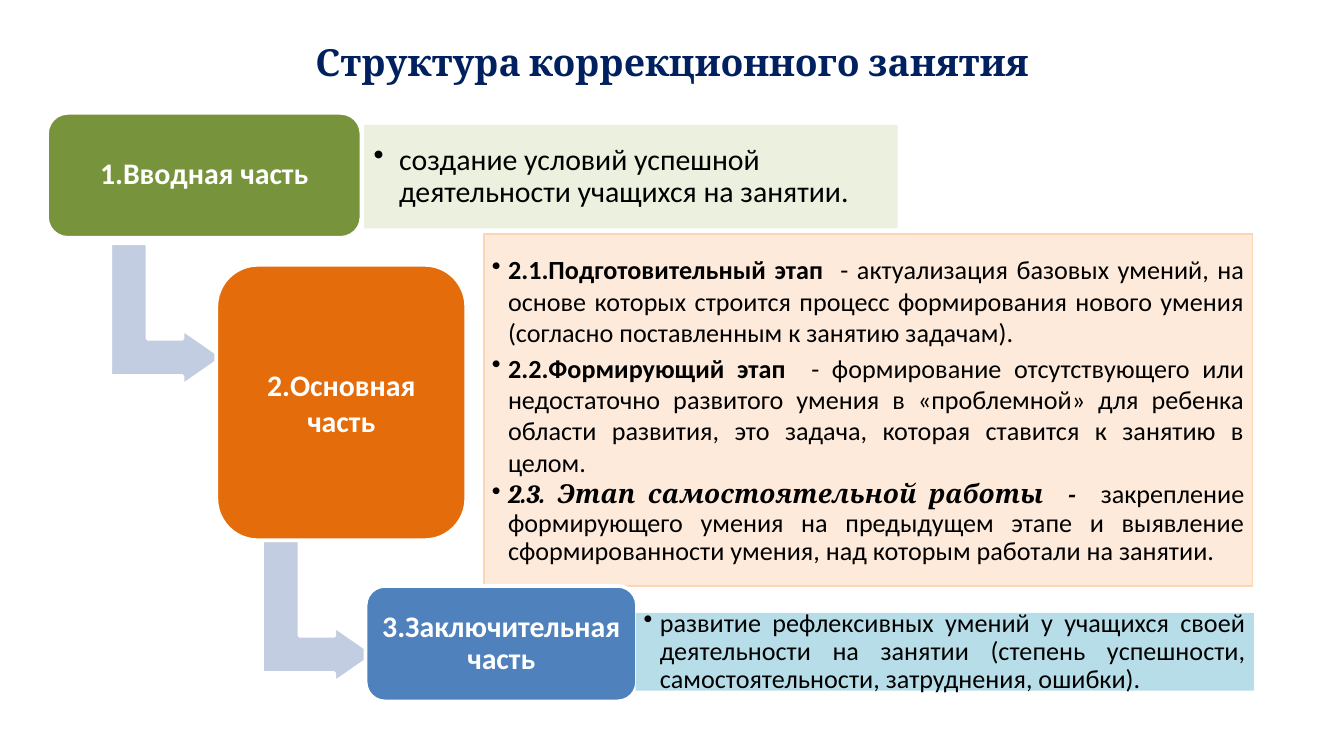
from lxml import etree
from pptx import Presentation
from pptx.dml.color import RGBColor
from pptx.enum.shapes import MSO_SHAPE
from pptx.enum.text import MSO_ANCHOR, PP_ALIGN
from pptx.oxml.ns import qn
from pptx.util import Inches, Pt

RECT = MSO_SHAPE.RECTANGLE
ROUNDED = MSO_SHAPE.ROUNDED_RECTANGLE
BENT_ARROW = MSO_SHAPE.BENT_UP_ARROW
MIDDLE = MSO_ANCHOR.MIDDLE
LEFT, CENTER, JUSTIFY = PP_ALIGN.LEFT, PP_ALIGN.CENTER, PP_ALIGN.JUSTIFY

prs = Presentation()
prs.slide_width = Inches(10)
prs.slide_height = prs.slide_width * 9 // 16
UNIT = prs.slide_width / 100  # side of one grid cell: 100 columns across

slide = prs.slides.add_slide(prs.slide_layouts[5])


def add_block(kind, cells, fill, line=None, line_width=2, inset=0.07):
    """Add a flat shape; cells is left, top, width, height in grid cells."""
    block = slide.shapes.add_shape(kind, *(round(c * UNIT) for c in cells))
    block.shadow.inherit = False
    block.fill.solid()
    block.fill.fore_color.rgb = RGBColor.from_string(fill)
    if line:
        block.line.color.rgb = RGBColor.from_string(line)
        block.line.width = Pt(line_width)
    else:
        block.line.fill.background()
    frame = block.text_frame
    frame.word_wrap = True
    frame.vertical_anchor = MIDDLE
    frame.margin_left = frame.margin_right = Inches(inset)
    frame.margin_top = frame.margin_bottom = Inches(inset)
    return block


def style(font, size, color, bold=False, name="Calibri"):
    font.name, font.size, font.bold = name, Pt(size), bold
    font.color.rgb = RGBColor.from_string(color)


title = slide.shapes.title
title.left, title.top, title.width, title.height = (
    round(c * UNIT) for c in (5, 2.3, 90, 4.6))
title.text_frame.text = "Структура коррекционного занятия"
title.text_frame.vertical_anchor = MIDDLE
heading = title.text_frame.paragraphs[0]
heading.alignment = CENTER
style(heading.font, 20, "002060", True, "Cambria")

# Each point: lead-in, lead-in font, remaining text, line spacing
stages = [
    ("2.1.Подготовительный этап", "Calibri",
     "  - актуализация базовых умений, на основе которых строится процесс "
     "формирования нового умения (согласно поставленным к занятию задачам).", 1.0),
    ("2.2.Формирующий этап  ", "Calibri",
     "- формирование отсутствующего или недостаточно развитого умения в "
     "«проблемной» для ребенка области развития, это задача, которая ставится "
     "к занятию в целом.", 1.0),
    ("2.3. Этап самостоятельной работы  -  ", "Cambria",
     "закрепление формирующего умения на предыдущем этапе и выявление "
     "сформированности умения, над которым работали на занятии.", 0.9),
]
opening = [("", "", "создание условий успешной деятельности учащихся на занятии.", 0.9)]
closing = [("", "", "развитие рефлексивных умений у учащихся своей деятельности на "
            "занятии (степень успешности, самостоятельности, затруднения, ошибки).", 0.9)]

parts = [
    dict(name="1.Вводная часть", spacing=0.9, box=(3.5, 8.4, 23.4, 9.3), fill="77933C",
         arrow=(7.1, 19.2), note=(27.1, 9.3, 39.7, 7.7), tint="EBF1DE", edge=None,
         points=opening, size=16, align=LEFT, indent=0.19, inset=0.07),
    dict(name="2.Основная часть", spacing=1.0, box=(16.1, 19.7, 18.6, 20.5), fill="E46C0A",
         arrow=(18.4, 41.3), note=(36, 17.4, 57.2, 26.2), tint="FDEADA", edge="FCD5B5",
         points=stages, size=14, align=JUSTIFY, indent=0.12, inset=0.06),
    dict(name="3.Заключительная часть", spacing=0.9, box=(27.2, 43.6, 20.2, 8.6), fill="4F81BD",
         arrow=None, note=(47.3, 45.6, 46, 5.8), tint="B7DEE8", edge=None,
         points=closing, size=14, align=JUSTIFY, indent=0.12, inset=0.06),
]

for part in parts:
    if part["arrow"]:
        arrow = add_block(BENT_ARROW, (*part["arrow"], 10.6, 8.4), "C2CDE1", "FFFFFF")
        arrow.rotation = 90
        for i, ratio in enumerate((0.33, 0.25, 0.36)):
            arrow.adjustments[i] = ratio

    box = add_block(ROUNDED, part["box"], part["fill"], "FFFFFF")
    label = box.text_frame.paragraphs[0]
    label.text = part["name"]
    label.alignment = CENTER
    label.line_spacing = part["spacing"]
    style(label.font, 16, "FFFFFF", True)

    note = add_block(RECT, part["note"], part["tint"], part["edge"], 0.75, part["inset"])
    for i, (lead, lead_font, text, spacing) in enumerate(part["points"]):
        frame = note.text_frame
        point = frame.add_paragraph() if i else frame.paragraphs[0]
        point.alignment = part["align"]
        point.line_spacing = spacing
        point.space_after = Pt(0.15 * part["size"])
        properties = point._p.get_or_add_pPr()
        properties.set("marL", str(Inches(part["indent"])))
        properties.set("indent", str(-Inches(part["indent"])))
        etree.SubElement(properties, qn("a:buChar"), char="•")
        if lead:
            opener = point.add_run()
            opener.text = lead
            style(opener.font, part["size"], "000000", True, lead_font)
            opener.font.italic = lead_font == "Cambria"
            body = point.add_run()
            body.text = text
            style(body.font, part["size"], "000000")
        else:
            point.add_run().text = text
            style(point.font, part["size"], "000000")

prs.save("out.pptx")
